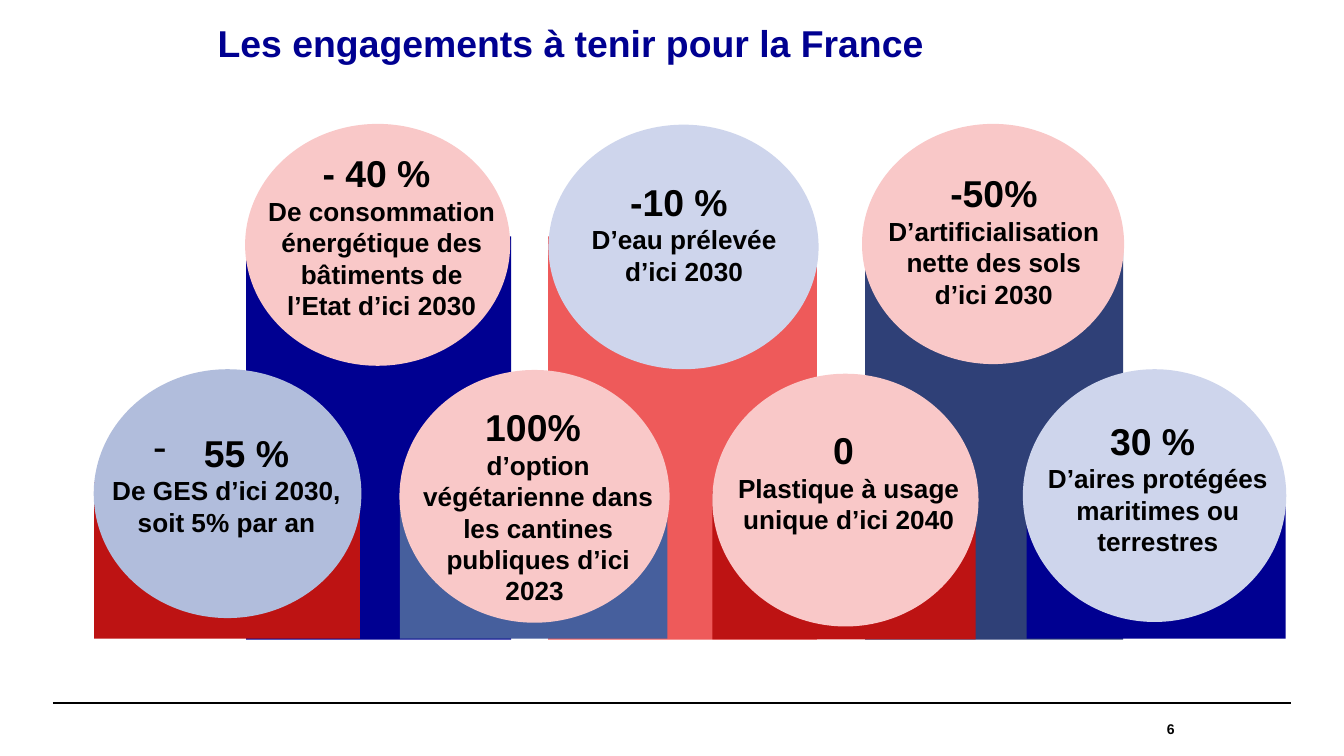
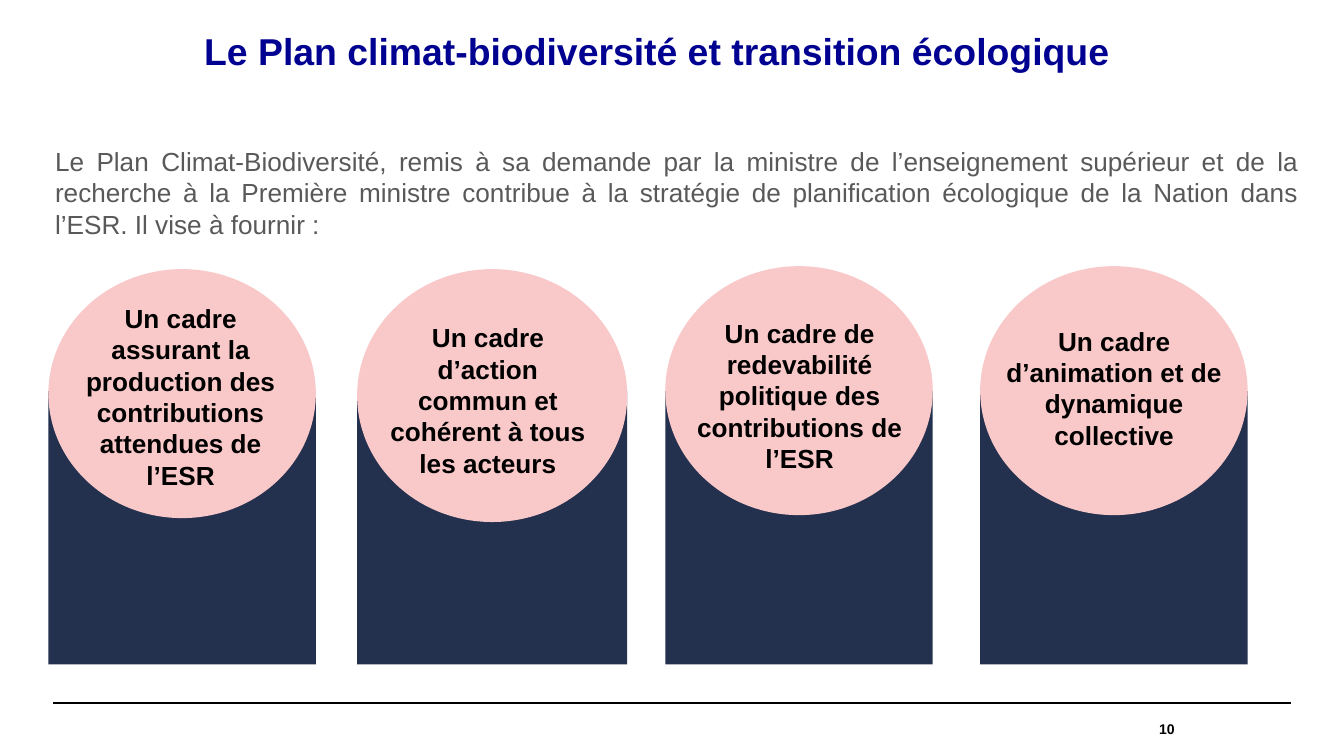
"""Build two slides on the French ecological commitments and the climate plan."""
from dataclasses import dataclass
from typing import NamedTuple

from lxml import etree
from pptx import Presentation
from pptx.dml.color import RGBColor
from pptx.enum.shapes import MSO_CONNECTOR, MSO_SHAPE
from pptx.enum.text import MSO_ANCHOR, MSO_AUTO_SIZE, PP_ALIGN
from pptx.oxml.ns import qn
from pptx.util import Pt

RECTANGLE, OVAL = MSO_SHAPE.RECTANGLE, MSO_SHAPE.OVAL
STRAIGHT = MSO_CONNECTOR.STRAIGHT
TOP, MIDDLE = MSO_ANCHOR.TOP, MSO_ANCHOR.MIDDLE
LEFT, CENTER, RIGHT, JUSTIFY = PP_ALIGN.LEFT, PP_ALIGN.CENTER, PP_ALIGN.RIGHT, PP_ALIGN.JUSTIFY
NO_AUTOFIT = MSO_AUTO_SIZE.NONE

FONT = "Arial"
TITLE_ONLY = 5
FIGURE_SIZE, DETAIL_SIZE = 20, 14
DASH_INDENT = 27
COLORS = {
    "black": "000000",
    "grey": "595959",
    "navy": "000091",
    "red": "BD1313",
    "coral": "EE5A5A",
    "slate": "2F4077",
    "steel": "465F9D",
    "midnight": "23304E",
    "pink": "F9C8C8",
    "pale_blue": "CED5EC",
    "mist_blue": "B1BDDC",
}


class Box(NamedTuple):
    """Left, top, width and height in points."""
    left: float
    top: float
    width: float
    height: float


class Line(NamedTuple):
    """One paragraph with its size and optional dash bullet."""
    text: str
    size: float = DETAIL_SIZE
    dashed: bool = False


@dataclass(frozen=True)
class Pillar:
    """A disc with a caption, standing on a bar."""
    bar: Box
    bar_color: str
    disc: Box
    disc_color: str
    caption: Box
    lines: tuple[Line, ...]


def commitment(figure: str, detail: str, dashed: bool = False) -> tuple[Line, ...]:
    """Return the large figure and the detail below it."""
    return Line(figure, FIGURE_SIZE, dashed), Line(detail)


COMMITMENTS = (
    Pillar(Box(131.8, 126.7, 142, 216), "navy", Box(131.3, 66.4, 142, 129.6), "pink",
           Box(135.4, 77, 138.2, 99.4),
           commitment("- 40 % ", "De consommation énergétique des bâtiments de l’Etat d’ici 2030")),
    Pillar(Box(293.6, 126.7, 144, 216), "coral", Box(293.8, 66.8, 144.7, 131), "pale_blue",
           Box(297.4, 92.2, 138.2, 65.5),
           commitment("-10 % ", "D’eau prélevée d’ici 2030")),
    Pillar(Box(463.5, 126.7, 138.2, 216), "slate", Box(461.8, 66.4, 140.4, 128.7), "pink",
           Box(463.7, 87.8, 137.5, 82),
           commitment("-50%", "D’artificialisation nette des sols d’ici 2030")),
    Pillar(Box(50.4, 258.5, 142.4, 83.7), "red", Box(50.2, 197.8, 143.4, 133.3), "mist_blue",
           Box(52.6, 226.8, 137.5, 65.5),
           commitment("55 % ", "De GES d’ici 2030, soit 5% par an", dashed=True)),
    Pillar(Box(214.2, 272.2, 143.3, 70), "steel", Box(214, 198.2, 144.7, 135.4), "pink",
           Box(219.6, 213.1, 137.5, 116.6),
           commitment("100% ", "d’option végétarienne dans les cantines publiques d’ici 2023 ")),
    Pillar(Box(381.6, 262.8, 141.1, 79.8), "red", Box(381.6, 200.2, 142.6, 135.4), "pink",
           Box(385.9, 225.4, 137.5, 65.5),
           commitment("0 ", "Plastique à usage unique d’ici 2040")),
    Pillar(Box(550, 265, 138.7, 77.2), "navy", Box(548, 197.8, 141.1, 135.4), "pale_blue",
           Box(551.5, 220.3, 137.5, 82),
           commitment("30 % ", "D’aires protégées maritimes ou terrestres")),
)


def frame(left: float, disc_top: float, caption: Box, *texts: str,
          width: float = 143.3, disc_height: float = 133.4) -> Pillar:
    """Return a pillar of the plan, its bar and disc sharing one column."""
    return Pillar(Box(left, 209.5, width, 146.5), "midnight",
                  Box(left, disc_top, width, disc_height), "pink",
                  caption, tuple(Line(text) for text in texts))


FRAMES = (
    frame(25.9, 144.2, Box(29.5, 158.4, 134.6, 108.7),
          "Un cadre assurant la production des contributions attendues de l’ESR"),
    frame(191.3, 144.2, Box(196.6, 168.8, 129.6, 75),
          "Un cadre d’action commun et cohérent à tous les acteurs",
          width=144.7, disc_height=135.5),
    frame(356.4, 142.6, Box(363.6, 166.3, 129.6, 92),
          "Un cadre de redevabilité", "politique des contributions de l’ESR"),
    frame(525.1, 142.6, Box(532.1, 170.6, 129.6, 75),
          "Un cadre d’animation et de dynamique collective"),
)
INTRODUCTION = (
    "Le Plan Climat-Biodiversité, remis à sa demande par la ministre de l’enseignement "
    "supérieur et de la recherche à la Première ministre contribue à la stratégie de "
    "planification écologique de la Nation dans l’ESR. Il vise à fournir :"
)


def points(box: Box) -> tuple[Pt, ...]:
    """Convert a box to lengths."""
    return tuple(Pt(value) for value in box)


def rgb(color: str) -> RGBColor:
    """Look up a named colour."""
    return RGBColor.from_string(COLORS[color])


def format_frame(text_frame, anchor, padded: bool) -> None:
    """Set wrapping, anchoring and insets."""
    text_frame.word_wrap = True
    text_frame.auto_size = NO_AUTOFIT
    text_frame.vertical_anchor = anchor
    side, edge = (7.2, 3.6) if padded else (0, 0)
    text_frame.margin_left = text_frame.margin_right = Pt(side)
    text_frame.margin_top = text_frame.margin_bottom = Pt(edge)


def format_paragraph(paragraph, size: float, color: str, bold: bool, align) -> None:
    """Set the font and alignment of a paragraph."""
    paragraph.alignment = align
    font = paragraph.font
    font.name, font.size, font.bold = FONT, Pt(size), bold
    font.color.rgb = rgb(color)


def add_dash(paragraph) -> None:
    """Give a paragraph a hanging dash bullet."""
    properties = paragraph._p.get_or_add_pPr()
    properties.set("marL", str(Pt(DASH_INDENT)))
    properties.set("indent", str(-Pt(DASH_INDENT)))
    etree.SubElement(properties, qn("a:buFontTx"))
    etree.SubElement(properties, qn("a:buChar")).set("char", "-")


def add_text(slide, box: Box, lines: tuple[Line, ...], color: str = "black", bold: bool = True,
             align=CENTER, anchor=TOP, padded: bool = True) -> None:
    """Add a text box with one paragraph per line."""
    text_frame = slide.shapes.add_textbox(*points(box)).text_frame
    format_frame(text_frame, anchor, padded)
    for index, line in enumerate(lines):
        paragraph = text_frame.add_paragraph() if index else text_frame.paragraphs[0]
        paragraph.text = line.text
        if line.dashed:
            add_dash(paragraph)
        format_paragraph(paragraph, line.size, color, bold, align)


def add_solid(slide, kind, box: Box, color: str) -> None:
    """Add a filled shape without outline."""
    shape = slide.shapes.add_shape(kind, *points(box))
    shape.shadow.inherit = False
    shape.fill.solid()
    shape.fill.fore_color.rgb = rgb(color)
    shape.line.fill.background()


def add_pillars(slide, pillars: tuple[Pillar, ...]) -> None:
    """Draw every bar first, then the discs with their captions."""
    for pillar in pillars:
        add_solid(slide, RECTANGLE, pillar.bar, pillar.bar_color)
    for pillar in pillars:
        add_solid(slide, OVAL, pillar.disc, pillar.disc_color)
        add_text(slide, pillar.caption, pillar.lines)


def add_slide(prs, title: str, title_box: Box, number: int):
    """Add a slide with its title, footer rule and page number."""
    slide = prs.slides.add_slide(prs.slide_layouts[TITLE_ONLY])
    heading = slide.shapes.title
    heading.left, heading.top, heading.width, heading.height = points(title_box)
    heading.text_frame.text = title
    format_frame(heading.text_frame, TOP, padded=False)
    paragraph = heading.text_frame.paragraphs[0]
    paragraph.line_spacing = 0.9
    format_paragraph(paragraph, 20, "navy", True, LEFT)

    rule = slide.shapes.add_connector(STRAIGHT, Pt(28.4), Pt(376.6), Pt(691.6), Pt(376.6))
    rule.line.color.rgb = rgb("black")
    rule.line.width = Pt(0.8)
    etree.SubElement(rule._element.spPr, qn("a:effectLst"))

    add_text(slide, Box(522.7, 376.6, 106.6, 28), (Line(str(number), 7.5),),
             align=RIGHT, anchor=MIDDLE, padded=False)
    return slide


def main() -> None:
    """Build and save the presentation."""
    prs = Presentation()
    prs.slide_width, prs.slide_height = Pt(720), Pt(405)

    commitments = add_slide(prs, "Les engagements à tenir pour la France",
                            Box(116.6, 13.7, 408.2, 28.8), 6)
    add_pillars(commitments, COMMITMENTS)

    plan = add_slide(prs, "Le Plan climat-biodiversité et transition écologique",
                     Box(109.4, 18, 501.8, 26), 10)
    add_text(plan, Box(29.5, 77.8, 666.7, 65.5), (Line(INTRODUCTION),),
             color="grey", bold=False, align=JUSTIFY, padded=False)
    add_pillars(plan, FRAMES)

    prs.save("out.pptx")


if __name__ == "__main__":
    main()
